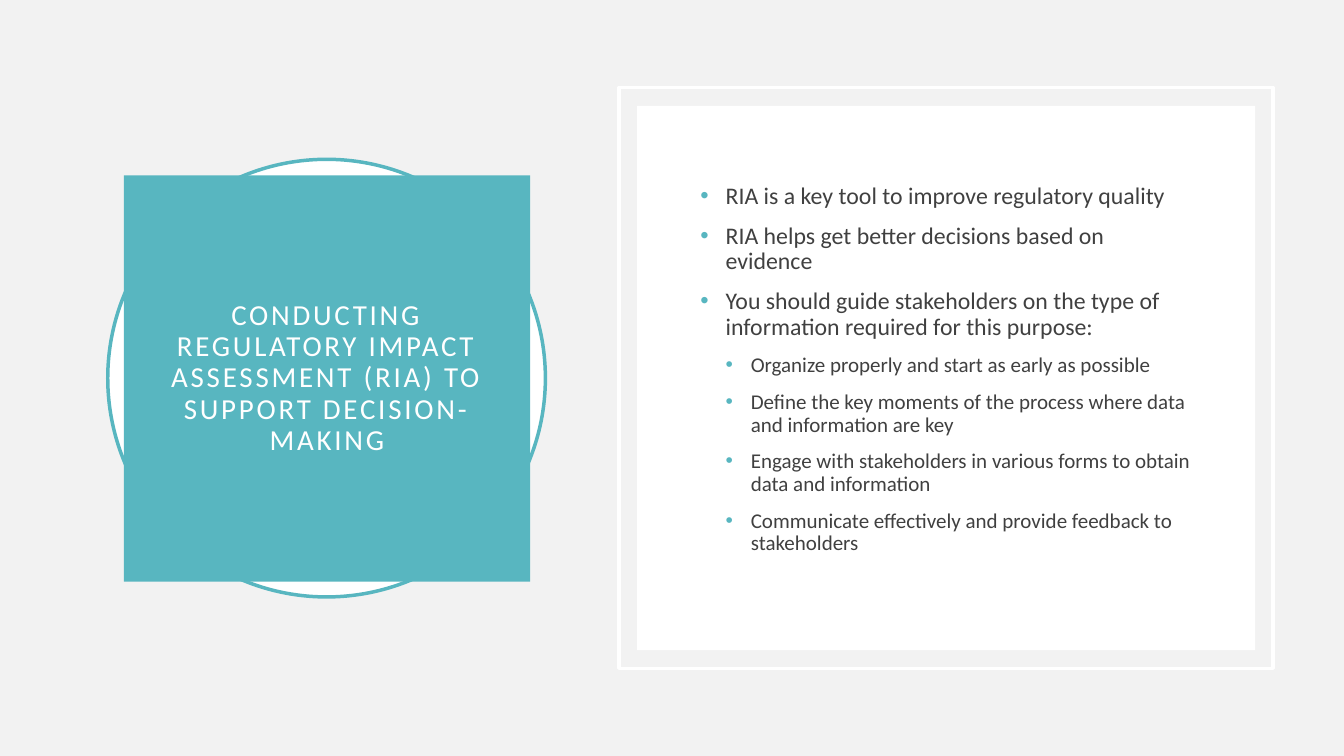
from lxml.etree import SubElement
from pptx import Presentation
from pptx.dml.color import RGBColor
from pptx.enum.shapes import MSO_SHAPE as Preset
from pptx.enum.text import MSO_ANCHOR as Anchor, MSO_AUTO_SIZE as AutoSize, PP_ALIGN as Align
from pptx.oxml.ns import qn
from pptx.util import Pt

TEAL, WHITE, GRAY, DARK = "58B6C0", "FFFFFF", "F2F2F2", "404040"
TITLE = "CONDUCTING REGULATORY IMPACT ASSESSMENT (RIA) TO SUPPORT DECISION-MAKING"
POINTS = [
    (0, "RIA is a key tool to improve regulatory quality"),
    (0, "RIA helps get better decisions based on evidence"),
    (0, "You should guide stakeholders on the type of information required for this purpose:"),
    (1, "Organize properly and start as early as possible"),
    (1, "Define the key moments of the process where data and information are key"),
    (1, "Engage with stakeholders in various forms to obtain data and information"),
    (1, "Communicate effectively and provide feedback to stakeholders"),
]
SIZES = (17, 15)
INDENT = 18


def apply_format(target, values):
    for name, value in values.items():
        setattr(target, name, value)


def color(color_format, hex_value):
    color_format.rgb = RGBColor.from_string(hex_value)


def fill_solid(fill, hex_value):
    fill.solid()
    color(fill.fore_color, hex_value)


def place(shape, left, top, width, height):
    apply_format(shape, {"left": Pt(left), "top": Pt(top), "width": Pt(width), "height": Pt(height)})


def add_panel(slide, preset, box, fill=None, line=None):
    shape = slide.shapes.add_shape(preset, *map(Pt, box))
    shape.shadow.inherit = False
    if fill:
        fill_solid(shape.fill, fill)
    else:
        shape.fill.background()
    if line:
        color(shape.line.color, line)
        shape.line.width = Pt(2.5)
    else:
        shape.line.fill.background()
    return shape


def add_run(paragraph, text, size, hex_value):
    run = paragraph.add_run()
    run.text = text
    apply_format(run.font, {"name": "Calibri", "size": Pt(size), "bold": False})
    color(run.font.color, hex_value)
    return run


def format_title(title, box):
    place(title, *box)
    fill_solid(title.fill, TEAL)
    frame = title.text_frame
    inset = Pt(14.4)
    apply_format(frame, {
        "word_wrap": True, "auto_size": AutoSize.NONE, "vertical_anchor": Anchor.MIDDLE,
        "margin_left": inset, "margin_right": inset, "margin_top": inset, "margin_bottom": inset,
    })
    paragraph = frame.paragraphs[0]
    apply_format(paragraph, {"alignment": Align.CENTER, "line_spacing": 0.9})
    run = add_run(paragraph, TITLE, 20.7, WHITE)
    run.font.element.set("spc", "200") if hasattr(run.font, "element") else run._r.get_or_add_rPr().set("spc", "200")


def add_bullet(paragraph, level):
    properties = paragraph._p.get_or_add_pPr()
    properties.set("marL", str(Pt(INDENT * (level + 1))))
    properties.set("indent", str(Pt(-INDENT)))
    bullet_color = SubElement(properties, qn("a:buClr"))
    SubElement(bullet_color, qn("a:srgbClr")).set("val", TEAL)
    SubElement(properties, qn("a:buFont")).set("typeface", "Arial")
    SubElement(properties, qn("a:buChar")).set("char", "•")


def add_points(slide, box):
    frame = slide.shapes.add_textbox(*map(Pt, box)).text_frame
    apply_format(frame, {"word_wrap": True, "vertical_anchor": Anchor.MIDDLE})
    for index, (level, text) in enumerate(POINTS):
        paragraph = frame.add_paragraph() if index else frame.paragraphs[0]
        apply_format(paragraph, {
            "level": level, "alignment": Align.LEFT, "line_spacing": 0.9, "space_before": Pt(10),
        })
        add_bullet(paragraph, level)
        add_run(paragraph, text, SIZES[level], DARK)


def main():
    presentation = Presentation()
    apply_format(presentation, {"slide_width": Pt(960), "slide_height": Pt(540)})
    slide = presentation.slides.add_slide(presentation.slide_layouts[5])
    fill_solid(slide.background.fill, GRAY)

    title = slide.shapes.title
    format_title(title, (88.4, 125.2, 290.2, 290.2))
    circle = add_panel(slide, Preset.OVAL, (77, 113.8, 312.6, 312.6), WHITE, TEAL)
    title.element.addprevious(circle.element)

    add_panel(slide, Preset.RECTANGLE, (442.2, 62.6, 467.2, 414.8), line=WHITE)
    add_panel(slide, Preset.RECTANGLE, (455.2, 75.6, 441.4, 388.8), WHITE)
    add_points(slide, (493.2, 113.8, 366.5, 300.4))
    presentation.save("out.pptx")


if __name__ == "__main__":
    main()
